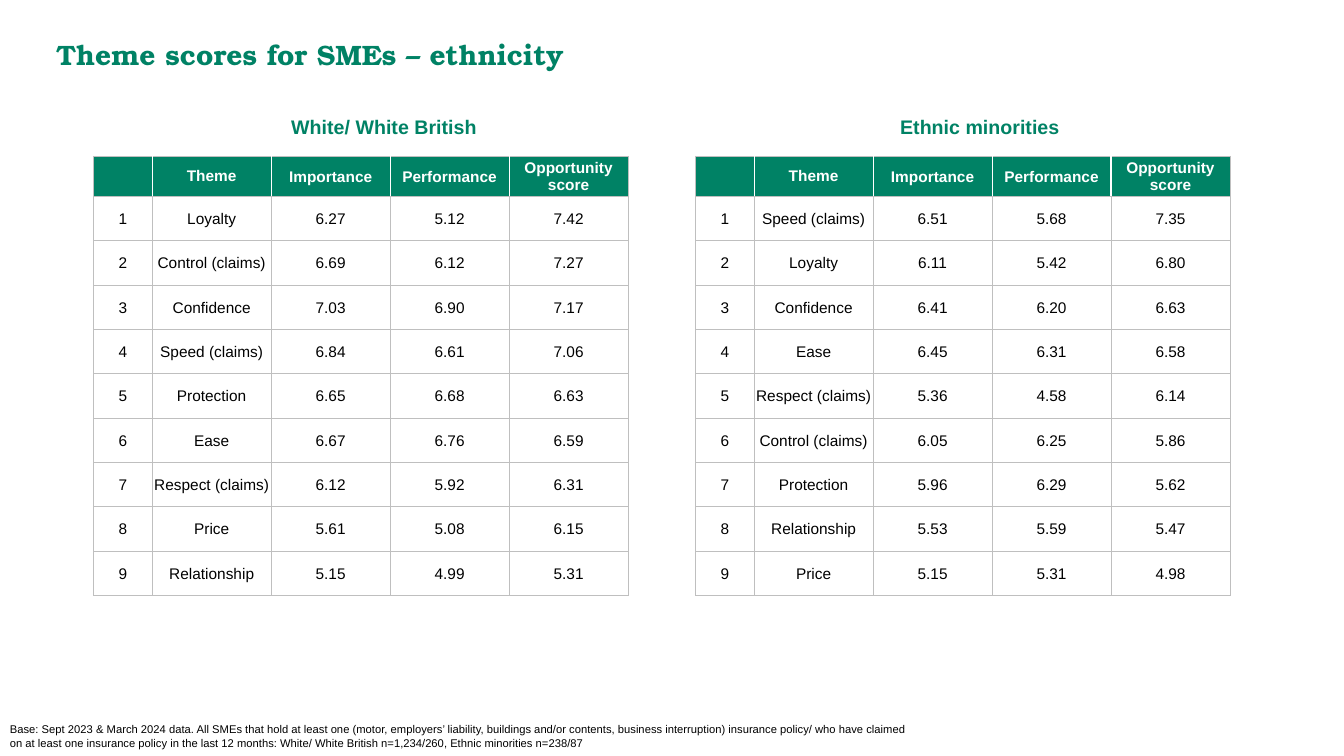
from lxml.etree import SubElement
from pptx import Presentation
from pptx.dml.color import RGBColor
from pptx.enum.text import MSO_ANCHOR as Anchor, PP_ALIGN as Align
from pptx.oxml.ns import qn
from pptx.util import Inches, Pt

WIDTH, HEIGHT = 13.33, 7.5
GREEN, GREY, WHITE, BLACK = "008265", "BFBFBF", "FFFFFF", "000000"
COLUMNS = [0.58] + [1.18] * 4
HEADER_HEIGHT, ROW_HEIGHT = 0.4, 0.44
TABLE_TOP, HEADING_RISE = 1.55, 0.46
HEADER = ["", "Theme", "Importance", "Performance", "Opportunity score"]

WHITE_BRITISH = [
    ("Loyalty", "6.27", "5.12", "7.42"),
    ("Control (claims)", "6.69", "6.12", "7.27"),
    ("Confidence", "7.03", "6.90", "7.17"),
    ("Speed (claims)", "6.84", "6.61", "7.06"),
    ("Protection", "6.65", "6.68", "6.63"),
    ("Ease", "6.67", "6.76", "6.59"),
    ("Respect (claims)", "6.12", "5.92", "6.31"),
    ("Price", "5.61", "5.08", "6.15"),
    ("Relationship", "5.15", "4.99", "5.31"),
]
ETHNIC_MINORITIES = [
    ("Speed (claims)", "6.51", "5.68", "7.35"),
    ("Loyalty", "6.11", "5.42", "6.80"),
    ("Confidence", "6.41", "6.20", "6.63"),
    ("Ease", "6.45", "6.31", "6.58"),
    ("Respect (claims)", "5.36", "4.58", "6.14"),
    ("Control (claims)", "6.05", "6.25", "5.86"),
    ("Protection", "5.96", "6.29", "5.62"),
    ("Relationship", "5.53", "5.59", "5.47"),
    ("Price", "5.15", "5.31", "4.98"),
]
BASE_NOTE = (
    "Base: Sept 2023 & March 2024 data. All SMEs that hold at least one (motor, "
    "employers’ liability, buildings and/or contents, business interruption) insurance "
    "policy/ who have claimed on at least one insurance policy in the last 12 months: "
    "White/ White British n=1,234/260, Ethnic minorities n=238/87"
)


def color(value):
    return RGBColor.from_string(value)


def write(frame, text, size, ink, bold=False, align=Align.LEFT, face="Arial"):
    frame.word_wrap = True
    para = frame.paragraphs[0]
    para.text = text
    para.alignment = align
    font = para.font
    font.name, font.size, font.bold = face, Pt(size), bold
    font.color.rgb = color(ink)


def add_text(page, box, text, size, ink, bold=False):
    shape = page.shapes.add_textbox(*map(Inches, box))
    write(shape.text_frame, text, size, ink, bold)


def add_title(page, box, text):
    title = page.shapes.title
    title.left, title.top, title.width, title.height = map(Inches, box)
    title.text_frame.vertical_anchor = Anchor.TOP
    write(title.text_frame, text, 20, GREEN, True, face="TeX Gyre Bonum")


def set_borders(cell, sides):
    """Borders come before the fill in the cell properties."""
    properties = cell._tc.get_or_add_tcPr()
    for place, (side, (ink, points)) in enumerate(sides.items()):
        line = SubElement(properties, qn(f"a:ln{side}"), w=str(Pt(points)))
        fill = SubElement(line, qn("a:solidFill"))
        SubElement(fill, qn("a:srgbClr"), val=ink)
        properties.insert(place, line)


def format_cell(cell, text, row, column):
    is_header = row == 0
    cell.fill.solid()
    cell.fill.fore_color.rgb = color(GREEN if is_header else WHITE)
    cell.vertical_anchor = Anchor.MIDDLE
    # The first two header cells keep the default margins
    if not is_header or column > 1:
        cell.margin_left = cell.margin_right = cell.margin_top = Inches(0.01)
        cell.margin_bottom = 0
    write(cell.text_frame, text, 11, WHITE if is_header else BLACK, is_header, Align.CENTER)
    outer, inner = (GREY, 0.75), (WHITE, 1)
    last = len(COLUMNS) - 1
    set_borders(cell, {
        "L": inner if is_header and column > 0 else outer,
        "R": inner if is_header and column < last else outer,
        "T": outer,
        "B": outer,
    })


def add_score_panel(page, left, heading_offset, heading, scores):
    # Heading above the table
    add_text(page, (left + heading_offset, TABLE_TOP - HEADING_RISE, 2.07, 0.34),
             heading, 14, GREEN, True)

    # Ranked table of scores
    rows = [HEADER] + [(str(rank), *score) for rank, score in enumerate(scores, 1)]
    heights = [HEADER_HEIGHT] + [ROW_HEIGHT] * len(scores)
    box = (left, TABLE_TOP, sum(COLUMNS), sum(heights))
    table = page.shapes.add_table(len(rows), len(COLUMNS), *map(Inches, box)).table
    table.horz_banding = False
    for column, width in zip(table.columns, COLUMNS):
        column.width = Inches(width)
    for row, height in zip(table.rows, heights):
        row.height = Inches(height)
    for r, values in enumerate(rows):
        for c, value in enumerate(values):
            format_cell(table.cell(r, c), value, r, c)


def main():
    deck = Presentation()
    deck.slide_width, deck.slide_height = Inches(WIDTH), Inches(HEIGHT)
    page = deck.slides.add_slide(deck.slide_layouts[5])
    add_title(page, (0.46, 0.32, 12.28, 0.44), "Theme scores for SMEs – ethnicity")
    add_score_panel(page, 0.93, 1.86, "White/ White British", WHITE_BRITISH)
    add_score_panel(page, 6.9, 1.93, "Ethnic minorities", ETHNIC_MINORITIES)
    add_text(page, (0, HEIGHT - 0.38, 9.23, 0.38), BASE_NOTE, 8, BLACK)
    deck.save("out.pptx")


if __name__ == "__main__":
    main()
